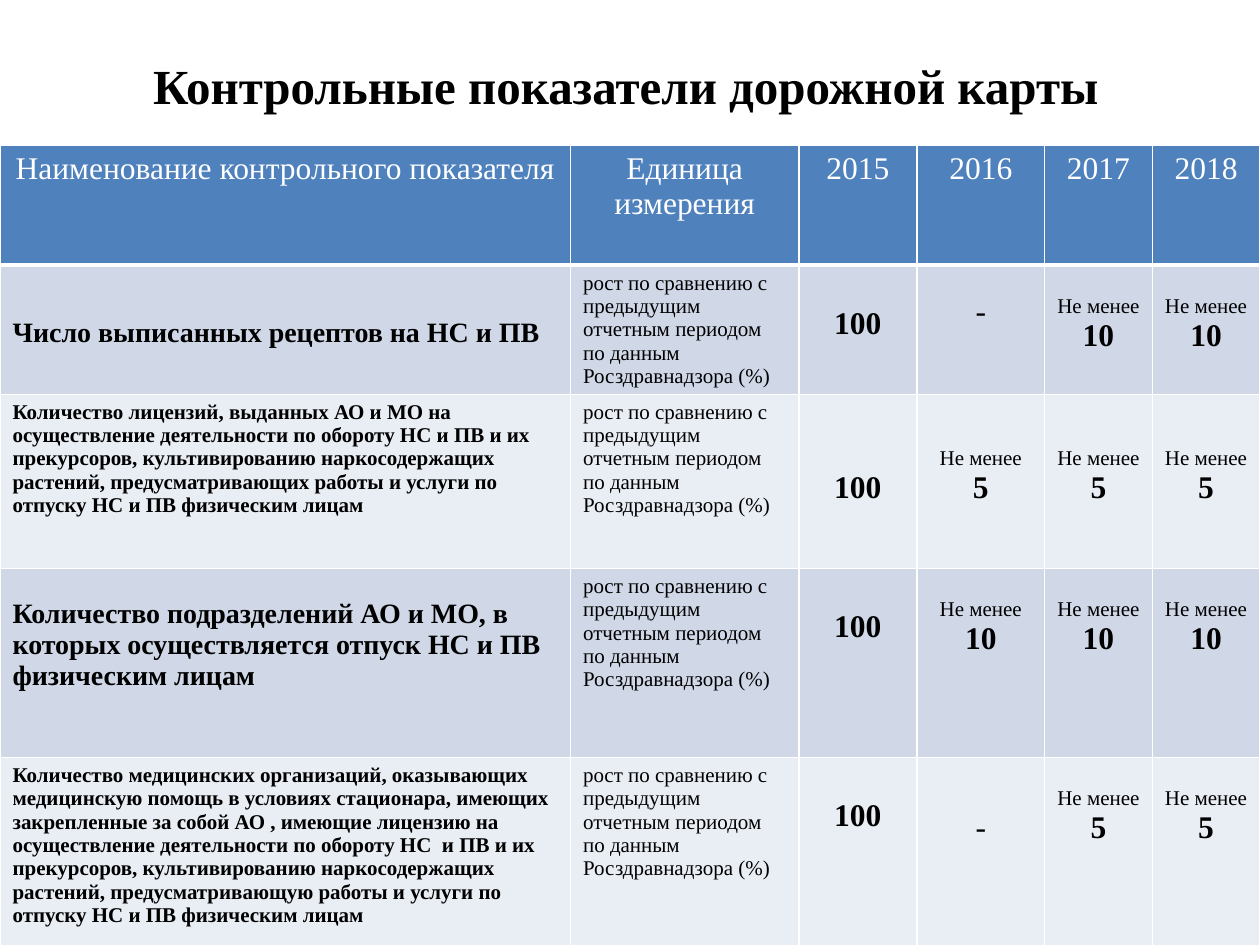
from dataclasses import dataclass

from lxml import etree
from pptx import Presentation
from pptx.dml.color import RGBColor
from pptx.enum import text as t
from pptx.oxml import ns
from pptx.util import Pt


@dataclass(frozen=True)
class Theme:
    font: str = "Times New Roman"
    title_size: int = 28
    large: int = 18
    medium: int = 16
    small: int = 12
    line_height: float = 1.11
    margin: float = 3.6
    ink: str = "000000"
    paper: str = "FFFFFF"
    header: str = "4F81BD"
    bands: tuple = ("D0D8E8", "E9EDF4")


THEME = Theme()
TITLE = "Контрольные показатели дорожной карты"
HEADERS = ["Наименование контрольного показателя", "Единица измерения",
           "2015", "2016", "2017", "2018"]
UNIT = "рост по сравнению с предыдущим отчетным периодом по данным Росздравнадзора (%)"
AT_LEAST = "Не менее"
COLUMN_WIDTHS = [326, 130.5, 67.5, 73, 61.5, 61.5]
ROW_HEIGHTS = [68.5, 66.5, 99.5, 108, 114.5]

# Name, name size, lines above the name, lines above the values,
# minimum growth for 2016 to 2018 (None shows a dash), lines above a dash
INDICATORS = [
    ("Число выписанных рецептов на НС и ПВ",
     THEME.medium, 2, 1, (None, 10, 10), 1),
    ("Количество лицензий, выданных АО и МО на осуществление деятельности по обороту "
     "НС и ПВ и их прекурсоров, культивированию наркосодержащих растений, "
     "предусматривающих работы и услуги по отпуску НС и ПВ физическим лицам",
     THEME.small, 0, 2, (5, 5, 5), 0),
    ("Количество подразделений АО и МО, в которых осуществляется отпуск НС и ПВ "
     "физическим лицам",
     THEME.medium, 1, 1, (10, 10, 10), 0),
    ("Количество медицинских организаций, оказывающих медицинскую помощь в условиях "
     "стационара, имеющих закрепленные за собой АО , имеющие лицензию на осуществление "
     "деятельности по обороту НС  и ПВ и их прекурсоров, культивированию "
     "наркосодержащих растений, предусматривающую работы и услуги по отпуску НС и ПВ "
     "физическим лицам",
     THEME.small, 0, 1, (None, 5, 5), 2),
]


def write_paragraph(paragraph, content, size, bold=False, color=THEME.ink, centered=True):
    paragraph.text = content
    paragraph.alignment = t.PP_ALIGN.CENTER if centered else t.PP_ALIGN.LEFT
    font = paragraph.font
    font.name, font.size, font.bold = THEME.font, Pt(size), bold
    font.color.rgb = RGBColor.from_string(color)


def set_borders(cell, widths):
    """Draw cell borders; widths maps a side (L, R, T, B in this order) to points."""
    properties = cell._tc.get_or_add_tcPr()
    for index, (side, width) in enumerate(widths.items()):
        line = etree.Element(ns.qn(f"a:ln{side}"), w=str(Pt(width)))
        fill = etree.SubElement(line, ns.qn("a:solidFill"))
        etree.SubElement(fill, ns.qn("a:srgbClr"), val=THEME.paper)
        properties.insert(index, line)


def fill_cell(cell, lines, fill, borders, gap=0, **style):
    """Write lines of (text, size, bold) below a gap given in points."""
    cell.fill.solid()
    cell.fill.fore_color.rgb = RGBColor.from_string(fill)
    cell.margin_top = Pt(THEME.margin + gap)
    frame = cell.text_frame
    for index, line in enumerate(lines):
        paragraph = frame.add_paragraph() if index else frame.paragraphs[0]
        write_paragraph(paragraph, *line, **style)
    set_borders(cell, borders)


def add_title(slide, left, top, width, height):
    title = slide.shapes.title
    title.left, title.top, title.width, title.height = map(Pt, (left, top, width, height))
    title.fill.solid()
    title.fill.fore_color.rgb = RGBColor.from_string(THEME.paper)
    title.text_frame.vertical_anchor = t.MSO_ANCHOR.MIDDLE
    write_paragraph(title.text_frame.paragraphs[0], TITLE, THEME.title_size, True)


def fill_indicator_row(cells, indicator, fill):
    name, name_size, name_lines, value_lines, targets, dash_lines = indicator
    borders = {"L": 1, "R": 1, "B": 1}
    small_line = THEME.small * THEME.line_height
    large_line = THEME.large * THEME.line_height

    fill_cell(cells[0], [(name, name_size, True)], fill, borders,
              name_lines * small_line, centered=False)
    fill_cell(cells[1], [(UNIT, THEME.small)], fill, borders, centered=False)
    fill_cell(cells[2], [("100", THEME.large, True)], fill, borders,
              value_lines * large_line)
    for cell, target in zip(cells[3:], targets):
        if target is None:
            lines, gap_lines = [("-", THEME.large)], dash_lines
        else:
            lines = [(AT_LEAST, THEME.small), (str(target), THEME.large, True)]
            gap_lines = value_lines
        fill_cell(cell, lines, fill, borders, gap_lines * small_line)


def add_indicator_table(slide, left, top):
    frame = slide.shapes.add_table(
        len(ROW_HEIGHTS), len(COLUMN_WIDTHS), Pt(left), Pt(top),
        Pt(sum(COLUMN_WIDTHS)), Pt(sum(ROW_HEIGHTS)))
    table = frame.table
    for column, width in zip(table.columns, COLUMN_WIDTHS):
        column.width = Pt(width)
    for row, height in zip(table.rows, ROW_HEIGHTS):
        row.height = Pt(height)

    header_borders = {"L": 1, "R": 1, "T": 1, "B": 3}
    for cell, label in zip(table.rows[0].cells, HEADERS):
        fill_cell(cell, [(label, THEME.large)], THEME.header, header_borders,
                  color=THEME.paper)
    for index, indicator in enumerate(INDICATORS):
        fill_indicator_row(list(table.rows[index + 1].cells), indicator,
                           THEME.bands[index % 2])


def main():
    presentation = Presentation()
    presentation.slide_width, presentation.slide_height = Pt(720), Pt(540)
    slide = presentation.slides.add_slide(presentation.slide_layouts[5])
    add_title(slide, 20, 26, 675, 45.5)
    add_indicator_table(slide, 0, 83)
    presentation.save("out.pptx")


if __name__ == "__main__":
    main()
